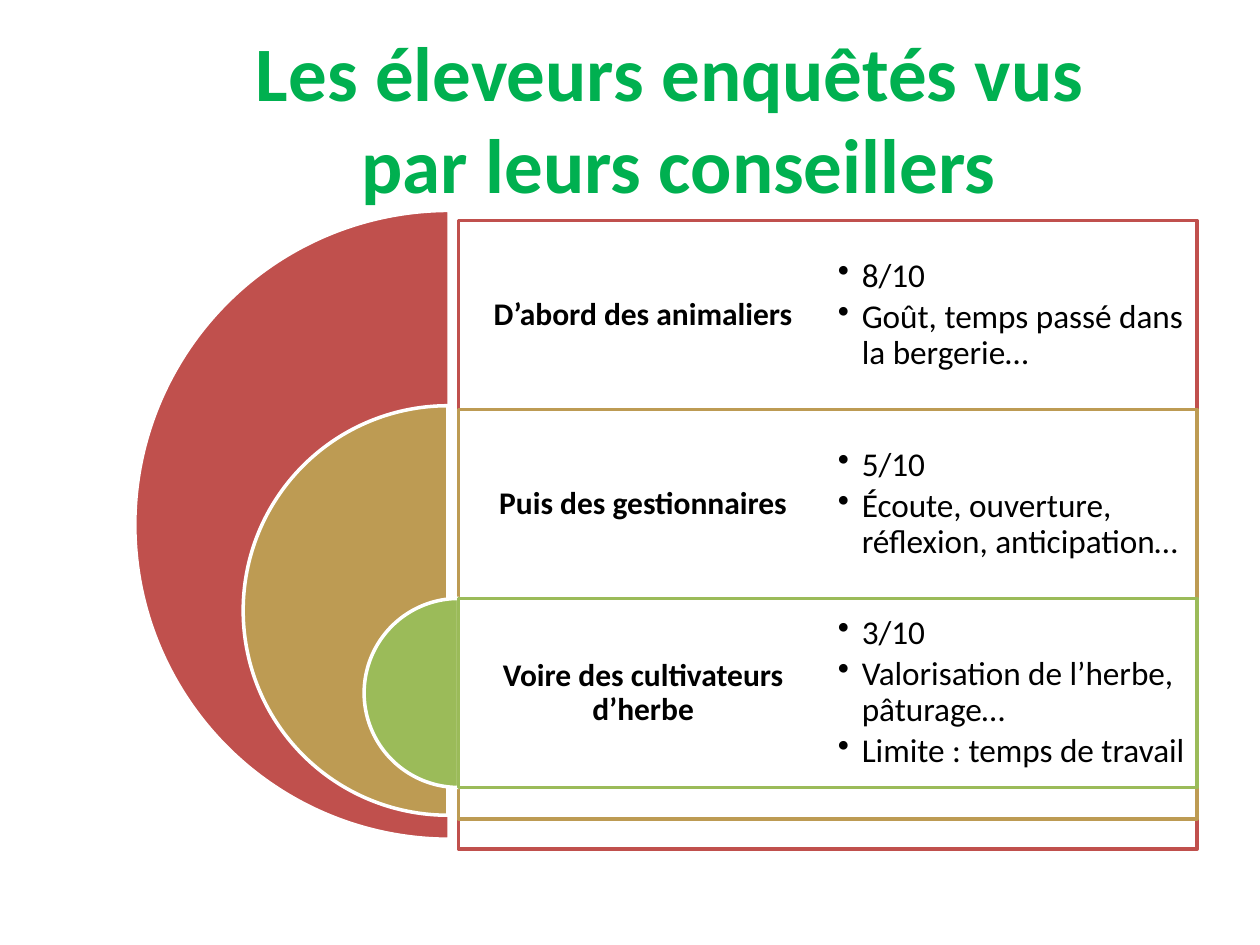
import pptx
import pptx.util
import pptx.dml.color
import pptx.enum.shapes
import pptx.enum.text
import pptx.oxml
import pptx.oxml.ns

Inches, Pt = pptx.util.Inches, pptx.util.Pt
SHAPE = pptx.enum.shapes.MSO_SHAPE
ALIGN = pptx.enum.text.PP_ALIGN
MIDDLE = pptx.enum.text.MSO_ANCHOR.MIDDLE

TITLE = "Les éleveurs enquêtés vus\v par leurs conseillers"
COLORS = {"title": "00B050", "text": "000000", "white": "FFFFFF",
          "red": "C0504D", "sand": "BD9B53", "green": "9BBB59"}
# colour, label, bullets, half disc (left, top, size), frame height
ROWS = [
    ("red", "D’abord des animaliers",
     ["8/10", "Goût, temps passé dans la bergerie…"], (1.07, 1.67, 4.99), 4.99),
    ("sand", "Puis des gestionnaires",
     ["5/10", "Écoute, ouverture, réflexion, anticipation…"], (1.93, 3.22, 3.25), 3.25),
    ("green", "Voire des cultivateurs d’herbe",
     ["3/10", "Valorisation de l’herbe, pâturage…", "Limite : temps de travail"],
     (2.89, 4.75, 1.5), 1.5),
]
LEFT, TOP, HALF, STEP = 3.64, 1.75, 2.93, 1.5


def tint(name):
    return pptx.dml.color.RGBColor.from_string(COLORS[name])


def style(para, size, color, bold=False):
    for run in para.runs:
        font = run.font
        font.name, font.size, font.bold = "Calibri", Pt(size), bold
        font.color.rgb = tint(color)


def draw(slide, kind, box, fill, line):
    shape = slide.shapes.add_shape(kind, *map(Inches, box))
    shape.shadow.inherit = False
    shape.fill.solid()
    shape.fill.fore_color.rgb = tint(fill)
    shape.line.color.rgb = tint(line)
    shape.line.width = Pt(2)
    return shape


def fade(shape, share):
    color = shape.fill._xPr.find(".//" + pptx.oxml.ns.qn("a:srgbClr"))
    color.append(pptx.oxml.parse_xml(
        f'<a:alpha {pptx.oxml.ns.nsdecls("a")} val="{share * 1000}"/>'))


def bullet(para):
    props = para._p.get_or_add_pPr()
    props.set("marL", str(Inches(0.19)))
    props.set("indent", str(-Inches(0.19)))
    props.append(pptx.oxml.parse_xml(
        f'<a:buChar {pptx.oxml.ns.nsdecls("a")} char="•"/>'))


def write(slide, left, top, lines, size, inset, after, label):
    box = slide.shapes.add_textbox(*map(Inches, (left, top, HALF, STEP)))
    frame = box.text_frame
    frame.word_wrap, frame.vertical_anchor = True, MIDDLE
    frame.margin_left = frame.margin_right = Inches(inset)
    frame.margin_top = frame.margin_bottom = Inches(inset)
    frame.text = "\n".join(lines)
    for para in frame.paragraphs:
        if not label:
            bullet(para)
        para.alignment = ALIGN.CENTER if label else ALIGN.LEFT
        para.line_spacing, para.space_after = 0.9, Pt(after)
        style(para, size, "text", label)


def main():
    deck = pptx.Presentation()
    deck.slide_width, deck.slide_height = Inches(10), Inches(7.5)
    slide = deck.slides.add_slide(deck.slide_layouts[5])

    # Title
    title = slide.shapes.title
    title.left, title.top = Inches(1.14), Inches(0.3)
    title.width, title.height = Inches(8.36), Inches(1.25)
    frame = title.text_frame
    frame.text = TITLE
    frame.auto_size = pptx.enum.text.MSO_AUTO_SIZE.NONE
    frame.word_wrap, frame.vertical_anchor = True, MIDDLE
    frame.paragraphs[0].alignment = ALIGN.CENTER
    style(frame.paragraphs[0], 44, "title", True)

    # Half discs, frames and their text
    for i, (color, label, points, (x, y, size), height) in enumerate(ROWS):
        top = TOP + i * STEP
        disc = draw(slide, SHAPE.PIE, (x, y, size, size), color, "white")
        disc.adjustments[0], disc.adjustments[1] = 54, 162
        panel = draw(slide, SHAPE.RECTANGLE, (LEFT, top, 2 * HALF, height),
                     "white", color)
        fade(panel, 90)
        write(slide, LEFT, top, [label], 18, 0.07, 6.3, True)
        write(slide, LEFT + HALF, top, points, 19, 0.08, 2.85, False)

    deck.save("out.pptx")


if __name__ == "__main__":
    main()
